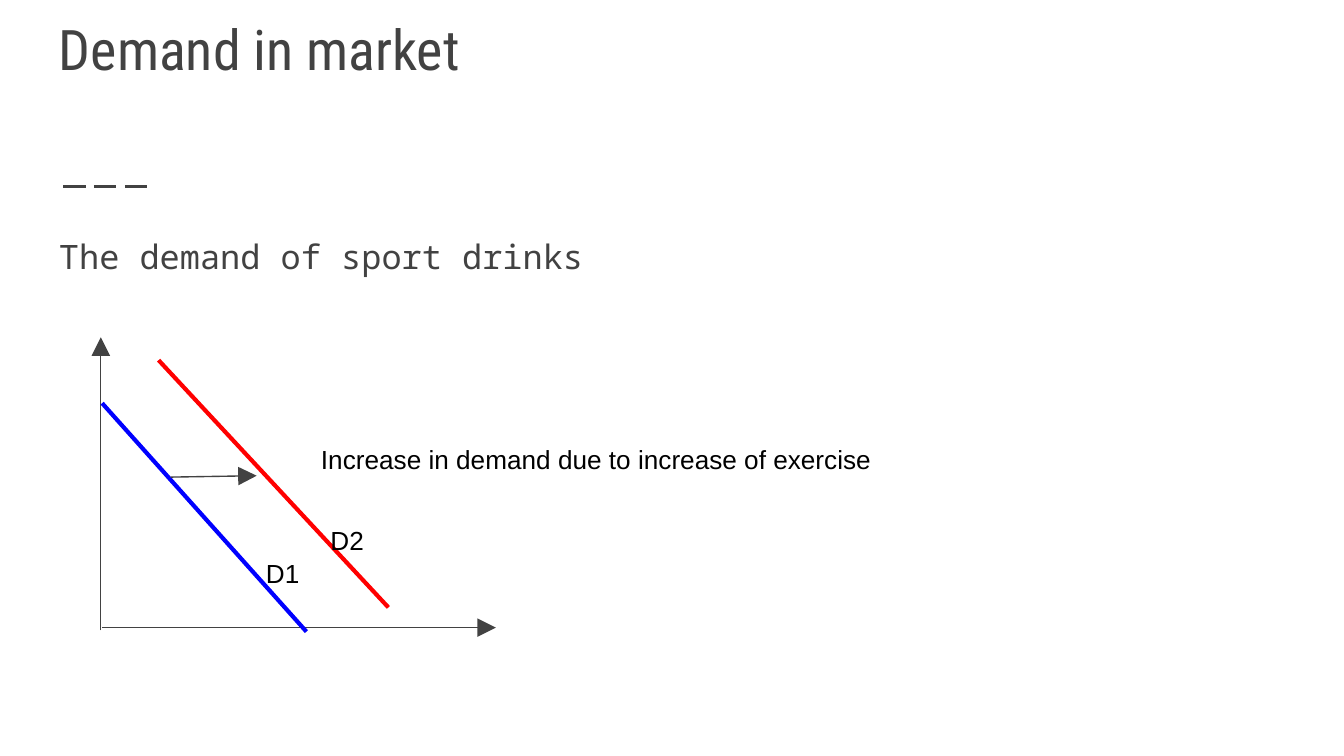
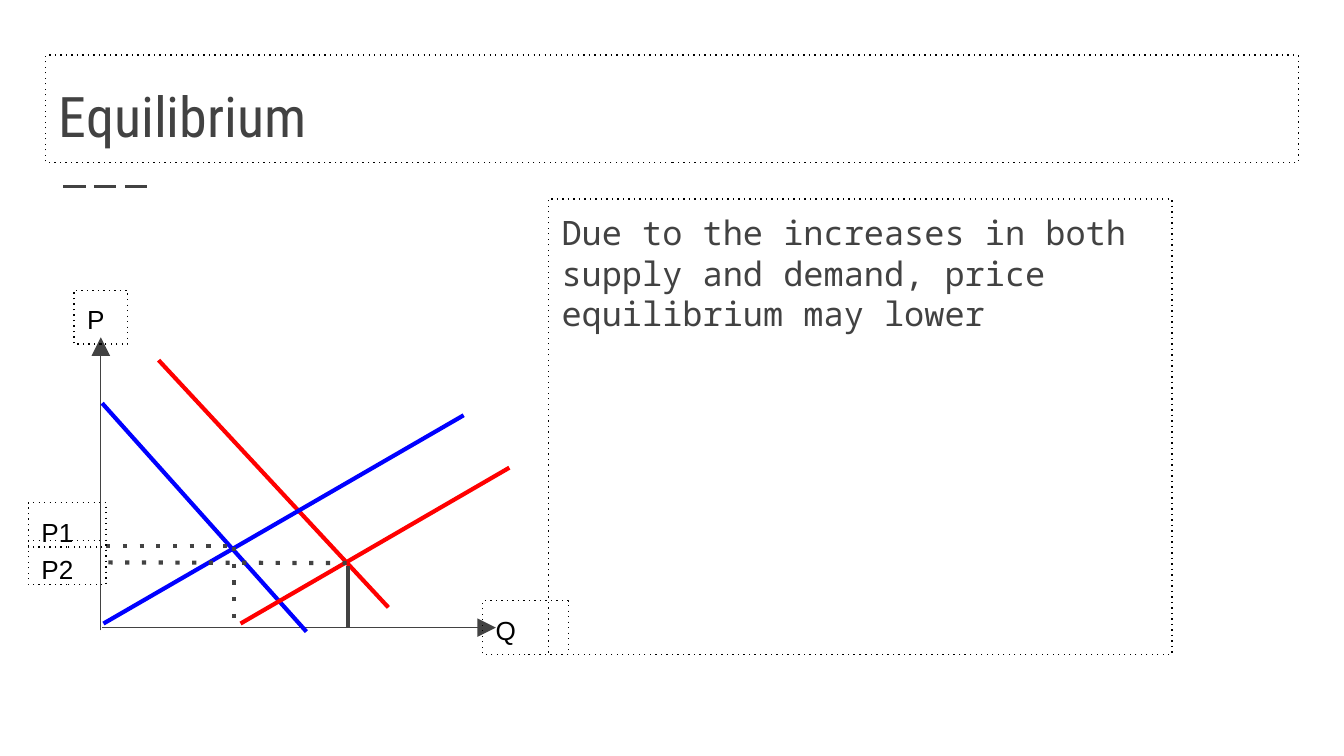
"""Build two slides on demand and equilibrium in the sport drinks market."""
from lxml import etree
from pptx import Presentation, util as u
from pptx.dml import color
from pptx.enum import shapes, text
from pptx.oxml import ns

INK, BLACK, BLUE, RED = "424242", "000000", "0000FF", "FF0000"
TITLE = {"name": "Roboto Condensed", "size": u.Pt(30), "hex": INK}
BODY = {"name": "Noto Sans Mono", "size": u.Pt(18), "hex": INK}
LABEL = {"name": "Arial", "size": u.Pt(14), "hex": BLACK}


def style_line(item, hex_color, width, dash=None, arrow=False):
    item.line.color.rgb = color.RGBColor.from_string(hex_color)
    item.line.width = u.Pt(width)
    properties = item._element.spPr
    outline = properties.find(ns.qn("a:ln"))
    if dash:
        etree.SubElement(outline, ns.qn("a:prstDash"), val=dash)
    if arrow:
        etree.SubElement(outline, ns.qn("a:tailEnd"), type="triangle", w="lg", len="lg")
    if properties.find(ns.qn("a:effectLst")) is None:
        etree.SubElement(properties, ns.qn("a:effectLst"))


def add_text(page, words, place, font, outlined=False, para_format=None):
    box = page.shapes.add_textbox(*map(u.Inches, place))
    frame = box.text_frame
    frame.word_wrap = True
    frame.vertical_anchor = text.MSO_ANCHOR.BOTTOM if font is TITLE else text.MSO_ANCHOR.TOP
    for side in ("left", "top", "right", "bottom"):
        setattr(frame, f"margin_{side}", u.Inches(0.1))
    para = frame.paragraphs[0]
    for key, value in (para_format or {}).items():
        setattr(para, key, value)
    span = para.add_run()
    span.text = words
    for key, value in font.items():
        if key == "hex":
            span.font.color.rgb = color.RGBColor.from_string(value)
        else:
            setattr(span.font, key, value)
    if outlined:
        style_line(box, BLACK, 0.75, "dot")
    return box


deck = Presentation()
deck.slide_width = u.Inches(10)
deck.slide_height = deck.slide_width * 9 // 16
demand, equilibrium = [deck.slides.add_slide(deck.slide_layouts[6]) for _ in range(2)]

title_rule = (0.47, 1.39, 1.14, 1.39, INK, 1.5, "lgDash")
market = [
    title_rule,
    (0.75, 4.69, 0.75, 2.51, INK, 0.75, None, True),
    (0.76, 4.67, 3.69, 4.67, INK, 0.75, None, True),
    (0.76, 3, 2.28, 4.7, BLUE, 2.25),
    (1.18, 2.68, 2.89, 4.52, RED, 2.25),
]
demand_shift = [(1.27, 3.55, 1.91, 3.54, INK, 0.75, None, True)]
supply_and_prices = [
    (0.77, 4.64, 3.45, 3.09, BLUE, 2.25),
    (1.79, 4.64, 3.79, 3.48, RED, 2.25),
    (0.79, 4.06, 1.75, 4.06, INK, 2.25, "dot"),
    (1.74, 4.07, 1.74, 4.64, INK, 2.25, "dot"),
    (2.59, 4.21, 2.59, 4.67, INK, 2.25),
    (2.58, 4.19, 0.79, 4.19, INK, 2.25, "dot"),
]
for page, lines in ((demand, market + demand_shift), (equilibrium, market + supply_and_prices)):
    for x1, y1, x2, y2, *look in lines:
        connector = page.shapes.add_connector(
            shapes.MSO_CONNECTOR.STRAIGHT, *map(u.Inches, (x1, y1, x2, y2)))
        style_line(connector, *look)
new_price_line = connector

add_text(demand, "Demand in market", (0.34, 0.02, 9.32, 0.69), TITLE)
add_text(demand, "The demand of sport drinks", (0.34, 1.61, 9.32, 3.39), BODY,
         para_format={"line_spacing": 1.15, "space_after": u.Pt(16)})
for words, place in (
    ("D1", (1.88, 4.05, 0.58, 0.33)),
    ("D2", (2.36, 3.8, 0.58, 0.33)),
    ("Increase in demand due to increase of exercise", (2.29, 3.2, 4.34, 0.45)),
):
    add_text(demand, words, place, LABEL)

for words, place, font in (
    ("Equilibrium", (0.34, 0.41, 9.32, 0.8), TITLE),
    ("Due to the increases in both supply and demand, price equilibrium may lower",
     (4.08, 1.48, 4.64, 3.39), BODY),
    ("P", (0.55, 2.16, 0.4, 0.4), LABEL),
    ("Q", (3.59, 4.47, 0.64, 0.4), LABEL),
    ("P1", (0.21, 3.74, 0.58, 0.33), LABEL),
    ("P2", (0.21, 4.02, 0.58, 0.33), LABEL),
):
    box = add_text(equilibrium, words, place, font, outlined=True)
new_price_line.end_connect(box, 3)

deck.save("out.pptx")
